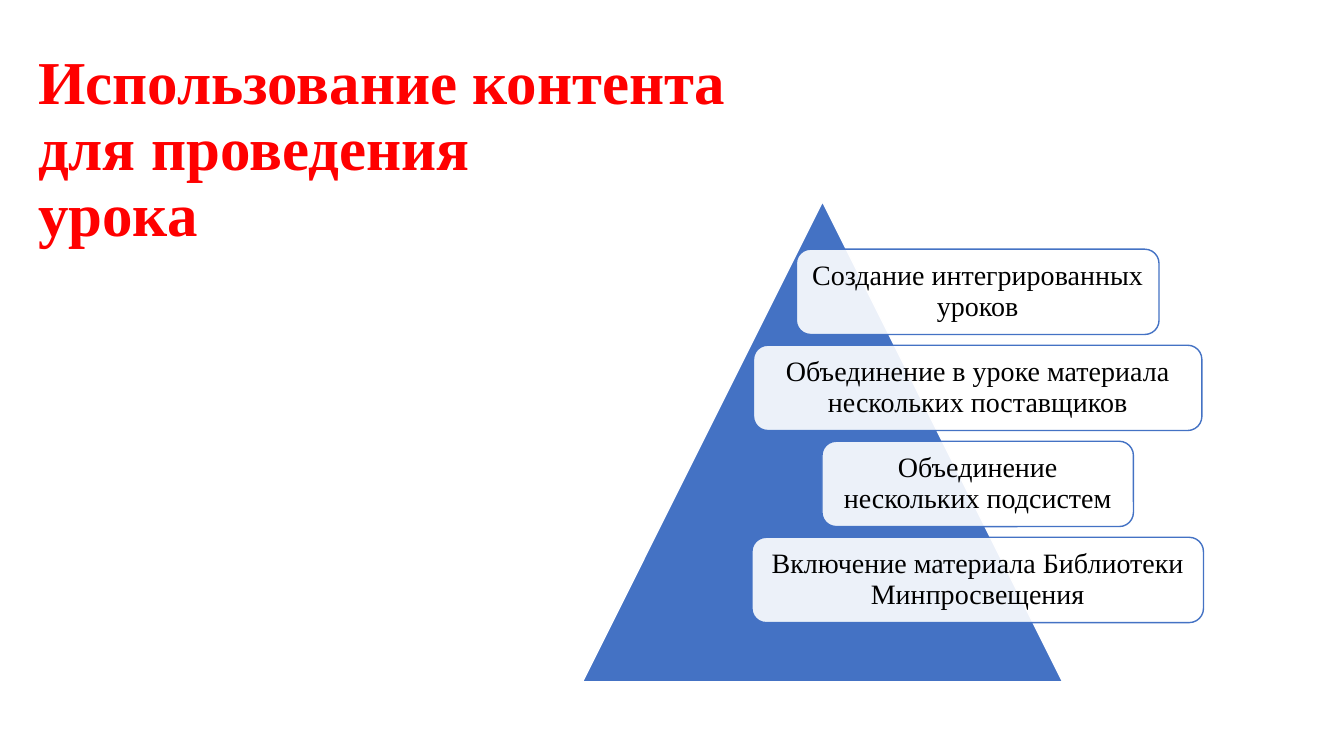
from dataclasses import dataclass

from lxml import etree
from pptx import Presentation
from pptx.dml.color import RGBColor
from pptx.enum.shapes import MSO_SHAPE
from pptx.enum.text import MSO_ANCHOR, PP_ALIGN
from pptx.oxml.ns import qn
from pptx.util import Cm, Pt

TRIANGLE = MSO_SHAPE.ISOSCELES_TRIANGLE
ROUNDED = MSO_SHAPE.ROUNDED_RECTANGLE
MIDDLE = MSO_ANCHOR.MIDDLE
LEFT, CENTER = PP_ALIGN.LEFT, PP_ALIGN.CENTER


@dataclass(frozen=True)
class Theme:
    font: str = "Times New Roman"
    title_color: RGBColor = RGBColor(0xFF, 0x00, 0x00)
    text_color: RGBColor = RGBColor(0x00, 0x00, 0x00)
    accent: RGBColor = RGBColor(0x44, 0x72, 0xC4)
    white: RGBColor = RGBColor(0xFF, 0xFF, 0xFF)
    title_size: float = 43.5
    card_size: float = 20
    card_opacity: int = 90
    line_spacing: float = 0.9


def write(tf, text, *, font, size, color, spacing, bold=False, align=LEFT):
    """Fill a text frame with one paragraph; newlines become line breaks."""
    tf.word_wrap = True
    tf.vertical_anchor = MIDDLE
    p = tf.paragraphs[0]
    p.alignment = align
    p.line_spacing = spacing
    for i, line in enumerate(text.split("\n")):
        if i:
            p.add_line_break()
        r = p.add_run()
        r.text = line
        r.font.name = font
        r.font.size = Pt(size)
        r.font.bold = bold
        r.font.color.rgb = color


class SlideBuilder:
    def __init__(self, s, theme):
        self.s = s
        self.theme = theme

    def title(self, text, x, y, w, h):
        t = self.theme
        sp = self.s.shapes.add_textbox(Cm(x), Cm(y), Cm(w), Cm(h))
        write(sp.text_frame, text, font=t.font, size=t.title_size,
              color=t.title_color, spacing=t.line_spacing, bold=True)

    def shape(self, kind, x, y, w, h, fill, line):
        sp = self.s.shapes.add_shape(kind, Cm(x), Cm(y), Cm(w), Cm(h))
        sp.shadow.inherit = False
        sp.fill.solid()
        sp.fill.fore_color.rgb = fill
        sp.line.color.rgb = line
        sp.line.width = Pt(1)
        return sp

    def card(self, text, x, y, w, h):
        t = self.theme
        sp = self.shape(ROUNDED, x, y, w, h, t.white, t.accent)
        # Let the pyramid show faintly through the card
        color = sp.fill._xPr.find(qn("a:solidFill"))[0]
        etree.SubElement(color, qn("a:alpha")).set("val", str(t.card_opacity * 1000))
        tf = sp.text_frame
        tf.margin_left = tf.margin_right = Cm(0.2)
        tf.margin_top = tf.margin_bottom = Cm(0.2)
        write(tf, text, font=t.font, size=t.card_size, color=t.text_color,
              spacing=t.line_spacing, align=CENTER)


def main():
    prs = Presentation()
    prs.slide_width, prs.slide_height = Cm(33.87), Cm(19.05)
    theme = Theme()
    slide = SlideBuilder(prs.slides.add_slide(prs.slide_layouts[6]), theme)

    # Title
    slide.title("Использование контента \nдля проведения \nурока",
                0.71, 0.69, 18.44, 6.22)

    # Pyramid
    slide.shape(TRIANGLE, 14.68, 5.08, 12.1, 12.1, theme.accent, theme.white)

    # Cards: one shared centre line, equal height and pitch
    center, top, height, pitch = 24.64, 6.28, 2.15, 2.42
    cards = [
        ("Создание интегрированных уроков", 9.14),
        ("Объединение в уроке материала нескольких поставщиков", 11.3),
        ("Объединение нескольких подсистем", 7.85),
        ("Включение материала Библиотеки Минпросвещения", 11.38),
    ]
    for i, (text, width) in enumerate(cards):
        slide.card(text, center - width / 2, top + i * pitch, width, height)

    prs.save("out.pptx")


if __name__ == "__main__":
    main()
